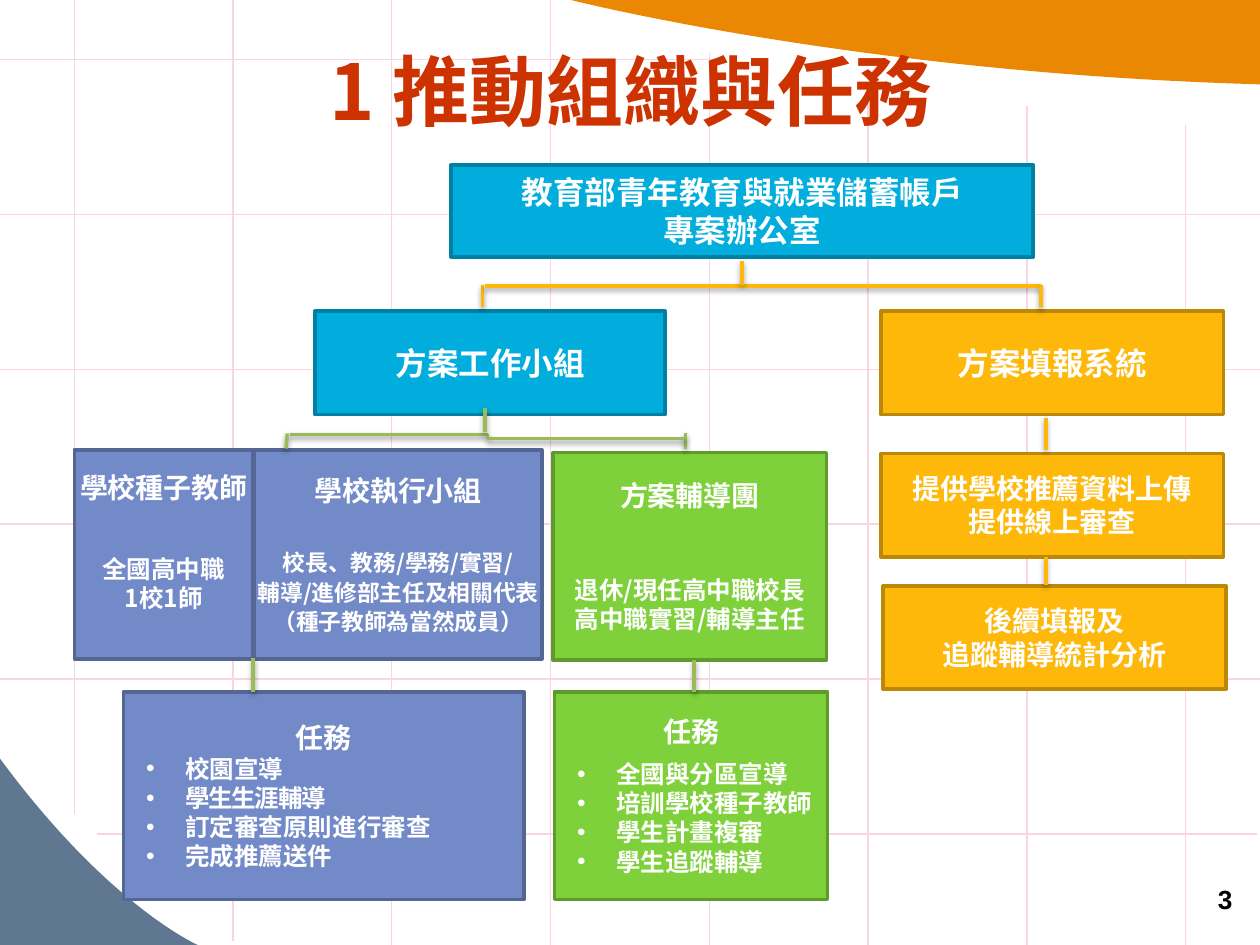
"""Build an organisation and task chart slide."""
from dataclasses import dataclass
from typing import Optional

import lxml.etree
import pptx
import pptx.dml.color
import pptx.enum.shapes
import pptx.enum.text
import pptx.oxml.ns
import pptx.util

Inches = pptx.util.Inches
Pt = pptx.util.Pt
qn = pptx.oxml.ns.qn
ALIGN = pptx.enum.text.PP_ALIGN
ANCHOR = pptx.enum.text.MSO_ANCHOR
KIND = pptx.enum.shapes.MSO_CONNECTOR
RECT = pptx.enum.shapes.MSO_SHAPE.RECTANGLE
CJK = "Noto Sans CJK SC"
COLORS = {
    "title": "CC3300", "black": "000000", "white": "FFFFFF", "grid": "FAD3E5",
    "slate": "5F7791", "orange": "EB8803", "link": "9BBB59",
    "cyan": "00ADDC", "cyan_edge": "0080A3", "gold": "FEB80A", "gold_edge": "BC8807",
    "blue": "738AC8", "blue_edge": "556694", "green": "7FD13B", "green_edge": "5E9B2C",
}
LEADING = {18: 21.7, 16: 18.9, 14: 16.7, 13: 16.7}


@dataclass
class Para:
    text: str
    size: float = 16
    after: float = 0
    bullet: bool = False
    spacing: float = 0


@dataclass
class Box:
    x: float
    y: float
    w: float
    h: float
    color: str
    paras: list[Para]
    bottom: float = 0


@dataclass
class Link:
    x1: float
    y1: float
    x2: float
    y2: float
    color: str
    elbow: bool = False


def rgb(name: str) -> pptx.dml.color.RGBColor:
    return pptx.dml.color.RGBColor.from_string(COLORS[name])


def child(parent, tag: str, **attrs: str):
    return lxml.etree.SubElement(parent, qn(tag), attrs)


def write(p, text: str, *, size: float, color: str = "white", font: str = CJK,
          align=ALIGN.CENTER, after: float = 0, bullet: bool = False,
          spacing: float = 0) -> None:
    if bullet:
        pPr = p._p.get_or_add_pPr()
        pPr.set("marL", str(Inches(0.49)))
        pPr.set("indent", str(Inches(-0.31)))
        child(pPr, "a:buFont", typeface="Arial")
        child(pPr, "a:buChar", char="•")
        align = ALIGN.LEFT
    p.alignment = align
    if size in LEADING:
        p.line_spacing = Pt(LEADING[size])
    if after:
        p.space_after = Pt(after)
    r = p.add_run()
    r.text = text
    r.font.size, r.font.bold, r.font.name = Pt(size), True, font
    r.font.color.rgb = rgb(color)
    rPr = r._r.get_or_add_rPr()
    child(rPr, "a:ea", typeface=font)
    if spacing:
        rPr.set("spc", str(round(spacing * 100)))


def add_label(s, x: float, y: float, w: float, h: float, text: str, **fmt) -> None:
    tf = s.shapes.add_textbox(Inches(x), Inches(y), Inches(w), Inches(h)).text_frame
    tf.word_wrap = True
    tf.vertical_anchor = fmt.pop("anchor", ANCHOR.TOP)
    write(tf.paragraphs[0], text, **fmt)


def add_rect(s, x: float, y: float, w: float, h: float, color: str, alpha: int = 100):
    sp = s.shapes.add_shape(RECT, Inches(x), Inches(y), Inches(w), Inches(h))
    sp.shadow.inherit = False
    sp.fill.solid()
    sp.fill.fore_color.rgb = rgb(color)
    sp.line.fill.background()
    if alpha < 100:
        fill = sp._element.spPr.find(qn("a:solidFill"))
        child(fill[0], "a:alpha", val=str(alpha * 1000))
    return sp


def add_box(s, box: Box) -> None:
    sp = add_rect(s, box.x, box.y, box.w, box.h, box.color)
    sp.line.color.rgb = rgb(f"{box.color}_edge")
    sp.line.width = Pt(2)
    tf = sp.text_frame
    tf.word_wrap = True
    tf.vertical_anchor = ANCHOR.MIDDLE
    tf.margin_left = tf.margin_right = tf.margin_top = 0
    tf.margin_bottom = Inches(box.bottom)
    for i, para in enumerate(box.paras):
        p = tf.add_paragraph() if i else tf.paragraphs[0]
        write(p, para.text, size=para.size, after=para.after,
              bullet=para.bullet, spacing=para.spacing)


def add_link(s, link: Link, width: float = 2, shadow: bool = True) -> None:
    kind = KIND.ELBOW if link.elbow else KIND.STRAIGHT
    ends = map(Inches, (link.x1, link.y1, link.x2, link.y2))
    sp = s.shapes.add_connector(kind, *ends)
    sp.line.color.rgb = rgb(link.color)
    sp.line.width = Pt(width)
    effects = child(sp._element.spPr, "a:effectLst")
    if shadow:
        outer = child(effects, "a:outerShdw", blurRad=str(Pt(3.1)), dist=str(Pt(1.6)),
                      dir="5400000", rotWithShape="0")
        child(child(outer, "a:srgbClr", val=COLORS["black"]), "a:alpha", val="38000")


def bezier(a, b, c, d, steps: int = 40) -> list[tuple[float, float]]:
    ts = [i / steps for i in range(steps + 1)]
    return [tuple((1 - t) ** 3 * p + 3 * (1 - t) ** 2 * t * q + 3 * (1 - t) * t * t * u + t ** 3 * v
                  for p, q, u, v in zip(a, b, c, d)) for t in ts]


def add_corner(s, corner: tuple[float, float], curve: list, color: str) -> None:
    fb = s.shapes.build_freeform(Inches(corner[0]), Inches(corner[1]))
    fb.add_line_segments([(Inches(x), Inches(y)) for x, y in curve], close=True)
    sp = fb.convert_to_shape()
    sp.shadow.inherit = False
    sp.fill.solid()
    sp.fill.fore_color.rgb = rgb(color)
    sp.line.fill.background()


def add_background(s) -> None:
    add_corner(s, (0, 7.5), bezier((1.57, 7.5), (1.57, 7.5), (0.86, 7.19), (0, 6.02)), "slate")
    spans = [(0, 6.46), (0, 7.47), (0, 7.5), (0, 7.5), (0.42, 7.5), (0.68, 7.5),
             (0.84, 7.5), (0.99, 7.5)]
    for i, (top, end) in enumerate(spans):
        x = 0.59 + 1.26 * i
        add_link(s, Link(x, top, x, end, "grid"), 0.75, False)
    rows = [(0, 5.68), (0, 10), (0, 10), (0, 10), (0, 10), (0.77, 9.98)]
    for i, (left, right) in enumerate(rows):
        y = 0.47 + 1.23 * i
        add_link(s, Link(left, y, right, y, "grid"), 0.75, False)
    for x, y, h, alpha in [(4.38, 2.95, 1.18, 25), (8.16, 5.4, 1.18, 30), (0.6, 4.16, 1.18, 20),
                           (6.9, 6.63, 0.87, 20), (3.11, 0, 0.44, 40), (3.12, 5.4, 1.18, 30),
                           (6.89, 1.71, 1.18, 30)]:
        add_rect(s, x, y, 1.23, h, "white", alpha)
    add_corner(s, (10, 0), bezier((4.53, 0), (4.53, 0), (6.8, 0.58), (10, 0.67)), "orange")


def bullets(*texts: str) -> list[Para]:
    return [Para(t, 14, bullet=True) for t in texts]


BOXES = [
    Box(3.58, 1.31, 4.62, 0.73, "cyan", [Para("教育部青年教育與就業儲蓄帳戶", 18), Para("專案辦公室", 18)]),
    Box(2.5, 2.47, 2.78, 0.82, "cyan", [Para("方案工作小組", 18)]),
    Box(6.99, 2.47, 2.72, 0.82, "gold", [Para("方案填報系統", 18)]),
    Box(6.99, 3.6, 2.72, 0.82, "gold", [Para("提供學校推薦資料上傳"), Para("提供線上審查")]),
    Box(7.01, 4.65, 2.72, 0.82, "gold", [Para("後續填報及"), Para("追蹤輔導統計分析")]),
    Box(0.59, 3.57, 1.42, 1.66, "blue", [
        Para("學校種子教師", after=28.8), Para("全國高中職", 14), Para("1校1師", 14)], 0.2),
    Box(2.02, 3.57, 2.28, 1.66, "blue", [
        Para("學校執行小組", after=23), Para("校長、教務/學務/實習/", 13),
        Para("輔導/進修部主任及相關代表（種子教師為當然成員）", 13)]),
    Box(0.98, 5.49, 3.18, 1.65, "blue", [
        Para("任務"), *bullets("校園宣導"), Para("學生生涯輔導", 14, bullet=True, spacing=-0.8),
        *bullets("訂定審查原則進行審查", "完成推薦送件")]),
    Box(4.39, 3.59, 2.17, 1.65, "green", [
        Para("方案輔導團", after=35.6), Para("退休/現任高中職校長", 14), Para("高中職實習/輔導主任", 14)]),
    Box(4.4, 5.49, 2.17, 1.65, "green", [
        Para("任務", after=6), *bullets("全國與分區宣導", "培訓學校種子教師", "學生計畫複審", "學生追蹤輔導")]),
]
LINKS = [
    Link(3.83, 2.26, 3.83, 2.44, "gold"), Link(3.85, 2.27, 8.26, 2.27, "gold"),
    Link(8.26, 2.26, 8.26, 2.44, "gold"), Link(5.89, 2.07, 5.89, 2.26, "gold"),
    Link(8.3, 3.32, 8.3, 3.57, "gold"), Link(8.3, 4.42, 8.3, 4.64, "gold"),
    Link(2.01, 5.22, 2.01, 5.49, "link"), Link(5.51, 5.24, 5.51, 5.49, "link"),
    Link(5.44, 3.44, 5.44, 3.56, "link"), Link(2.3, 3.45, 5.44, 3.48, "link", True),
    Link(3.85, 3.24, 3.85, 3.43, "link"), Link(2.28, 3.44, 2.27, 3.56, "link"),
]


def main() -> None:
    prs = pptx.Presentation()
    prs.slide_width, prs.slide_height = Inches(10), Inches(7.5)
    s = prs.slides.add_slide(prs.slide_layouts[6])
    add_background(s)
    add_label(s, 0.51, 0.21, 9, 1.01, "1 推動組織與任務", size=44, color="title",
              anchor=ANCHOR.MIDDLE)
    add_label(s, 7.55, 6.96, 2.33, 0.52, "3", size=15, color="black", font="Arial",
              align=ALIGN.RIGHT)
    for box in BOXES:
        add_box(s, box)
    for link in LINKS:
        add_link(s, link)
    prs.save("out.pptx")


if __name__ == "__main__":
    main()
